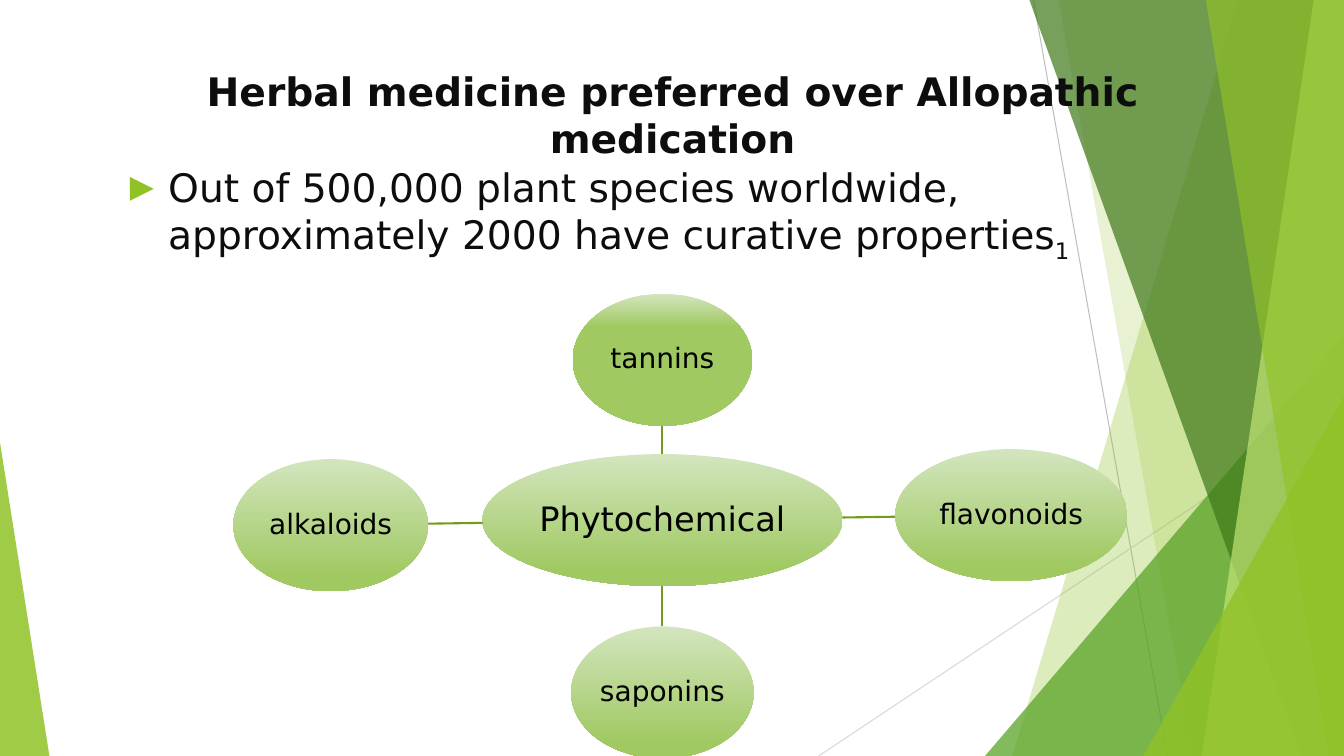
from math import hypot

from lxml.etree import SubElement as Sub
from pptx import Presentation
from pptx.dml.color import RGBColor as RGB
from pptx.enum.shapes import MSO_CONNECTOR as Link, MSO_SHAPE as Kind
from pptx.enum.text import MSO_ANCHOR as Anchor, PP_ALIGN as Align
from pptx.oxml.ns import qn
from pptx.util import Inches as In, Pt

# Content
TITLE = "Herbal medicine preferred over Allopathic medication"
FACT = ("Out of 500,000 plant species worldwide, "
        "approximately 2000 have curative properties")
NOTE = "1"
# Label, centre x, centre y, width, end of the shading in percent
HUB = ("Phytochemical", 6.57, 5.16, 3.57, 88)
NODES = [
    ("tannins", 6.57, 3.57, 1.78, 25),
    ("flavonoids", 10.03, 5.11, 2.3, 88),
    ("saponins", 6.57, 6.87, 1.81, 88),
    ("alkaloids", 3.28, 5.21, 1.93, 88),
]

# Theme
THEME = {
    "font": "DejaVu Sans", "ink": "0D0D0D", "label": "000000",
    "lime": "90C226", "leaf": "54A021", "moss": "3F7819", "pale": "C0E474",
    "light": "D3E5BE", "dark": "A0C962", "link": "739B1E",
    "big": 28, "hub": 24, "node": 20,
}
WIDE, HIGH = 13.33, 7.5
TALL = 1.31  # height of every ellipse

# Backdrop, from back to front
RAYS = [((10.25, 0), (11.58, HIGH), "BFBFBF"),
        ((WIDE, 4.03), (8.12, HIGH), "D9D9D9")]
# Band: top x, bottom x, reaching to the right edge
# Wedge: left, top, width, apex, standing on the bottom edge
DECOR = [
    ((12.28, 10.04), "lime", 30),
    ((10.5, 11.83), "lime", 20),
    ((9.77, 3.33, 3.56, 1), "leaf", 72),
    ((10.21, 12.91), "moss", 70),
    ((13.03, 11.92), "pale", 70),
    ((11.96, 13.18), "lime", 65),
    ((11.34, 3.93, 1.99, 1), "lime", 80),
    ((0, 4.39, 0.49, 0), "lime", 85),
]

deck = Presentation()
deck.slide_width, deck.slide_height = In(WIDE), In(HIGH)
slide = deck.slides.add_slide(deck.slide_layouts[5])
shapes = slide.shapes


def rgb(key):
    return RGB.from_string(THEME.get(key, key))


def style(run, size, color, bold=False):
    font = run.font
    font.name, font.size, font.bold = THEME["font"], Pt(THEME[size]), bold
    font.color.rgb = rgb(color)


def draw_line(start, end, color, width):
    line = shapes.add_connector(Link.STRAIGHT, *map(In, start + end))
    line.line.color.rgb, line.line.width = rgb(color), Pt(width)
    Sub(line._element.spPr, qn("a:effectLst"))


def draw_decor(geo, color, alpha):
    if len(geo) == 2:
        top, low = geo
        pen = shapes.build_freeform(In(top), 0)
        pen.add_line_segments([(In(x), In(y)) for x, y in
                               ((WIDE, 0), (WIDE, HIGH), (low, HIGH))])
        part = pen.convert_to_shape()
    else:
        left, top, width, apex = geo
        part = shapes.add_shape(Kind.ISOSCELES_TRIANGLE,
                                *map(In, (left, top, width, HIGH - top)))
        part.adjustments[0] = apex
    part.shadow.inherit = False
    part.line.fill.background()
    part.fill.solid()
    part.fill.fore_color.rgb = rgb(color)
    tone = part._element.spPr.find(".//" + qn("a:srgbClr"))
    Sub(tone, qn("a:alpha"), val=str(alpha * 1000))


def draw_node(node, size):
    label, x, y, width, stop = node
    oval = shapes.add_shape(Kind.OVAL, In(x - width / 2), In(y - TALL / 2),
                            In(width), In(TALL))
    oval.shadow.inherit = False
    oval.line.fill.background()
    oval.fill.gradient()
    oval.fill.gradient_angle = 270
    for mark, color, pos in zip(oval.fill.gradient_stops,
                                ("light", "dark"), (0, stop / 100)):
        mark.color.rgb, mark.position = rgb(color), pos
    frame = oval.text_frame
    frame.text, frame.word_wrap = label, True
    frame.vertical_anchor = Anchor.MIDDLE
    frame.margin_left = frame.margin_right = In(0.01)
    frame.margin_top = frame.margin_bottom = In(0.01)
    para = frame.paragraphs[0]
    para.alignment, para.line_spacing = Align.CENTER, 0.9
    style(para.runs[0], size, "label")


def rim(node, goal):
    """Point where the line from one centre to another leaves the ellipse."""
    x, y, width = node[1:4]
    dx, dy = goal[1] - x, goal[2] - y
    share = 1 / hypot(dx / (width / 2), dy / (TALL / 2))
    return x + dx * share, y + dy * share


# Backdrop
for start, end, color in RAYS:
    draw_line(start, end, color, 0.75)
for item in DECOR:
    draw_decor(*item)

# Title, brought in front of the backdrop
title = shapes.title
shapes._spTree.append(title._element)
title.left, title.top, title.width, title.height = map(
    In, (0.7, 0.62, 11.94, 1.44))
frame = title.text_frame
frame.text, frame.word_wrap = TITLE, True
frame.vertical_anchor = Anchor.TOP
frame.paragraphs[0].alignment = Align.CENTER
style(frame.paragraphs[0].runs[0], "big", "ink", True)

# Bulleted fact with its reference number
body = shapes.add_textbox(*map(In, (1.19, 0.97, 10.19, 3.23)))
frame = body.text_frame
frame.text, frame.word_wrap, frame.margin_top = FACT, True, In(0.65)
para = frame.paragraphs[0]
note = para.add_run()
note.text = NOTE
for run in para.runs:
    style(run, "big", "ink")
note.font._element.set("baseline", "-25000")
props = para._p.get_or_add_pPr()
props.set("marL", str(In(0.38)))
props.set("indent", str(In(-0.38)))
Sub(Sub(props, qn("a:buClr")), qn("a:srgbClr"), val=THEME["lime"])
Sub(props, qn("a:buSzPct"), val="80000")
Sub(props, qn("a:buFont"), typeface=THEME["font"])
Sub(props, qn("a:buChar"), char="▶")

# Hub and its nodes
draw_node(HUB, "hub")
for node in NODES:
    draw_line(rim(HUB, node), rim(node, HUB), "link", 1.5)
    draw_node(node, "node")

deck.save("out.pptx")
